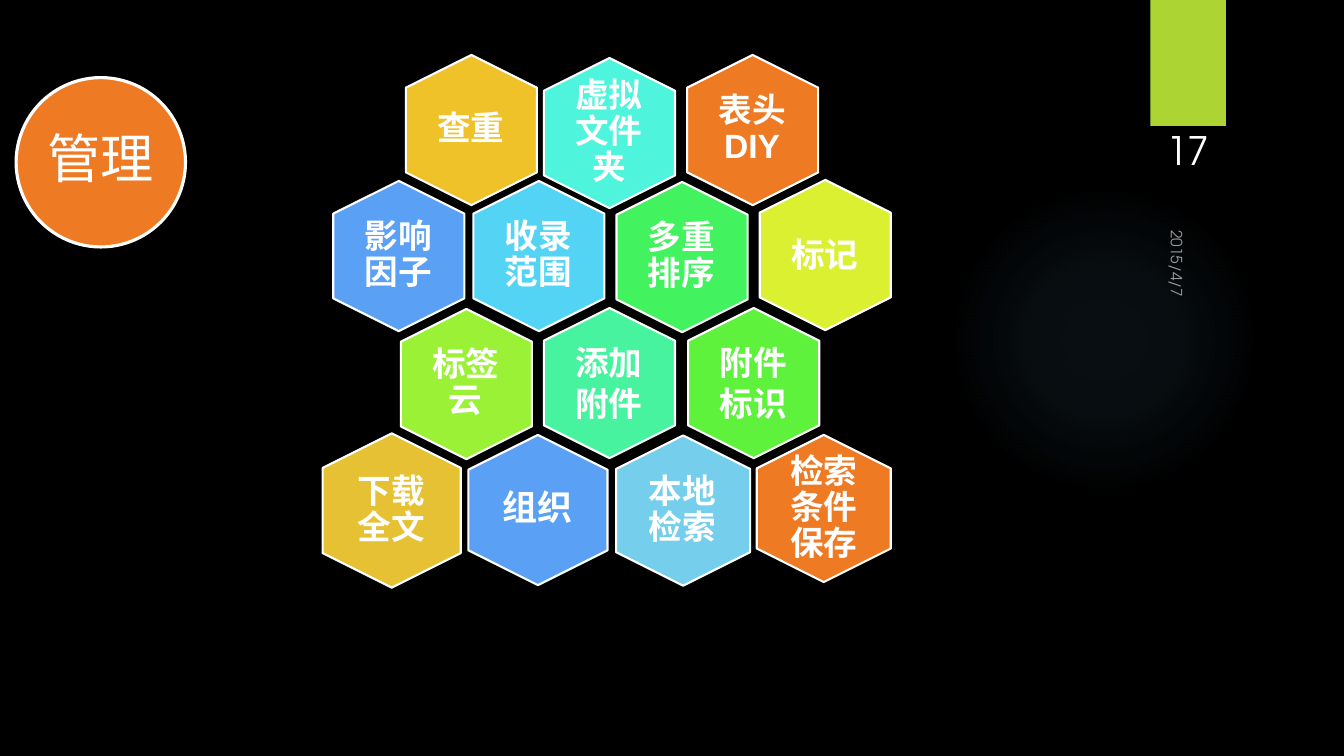
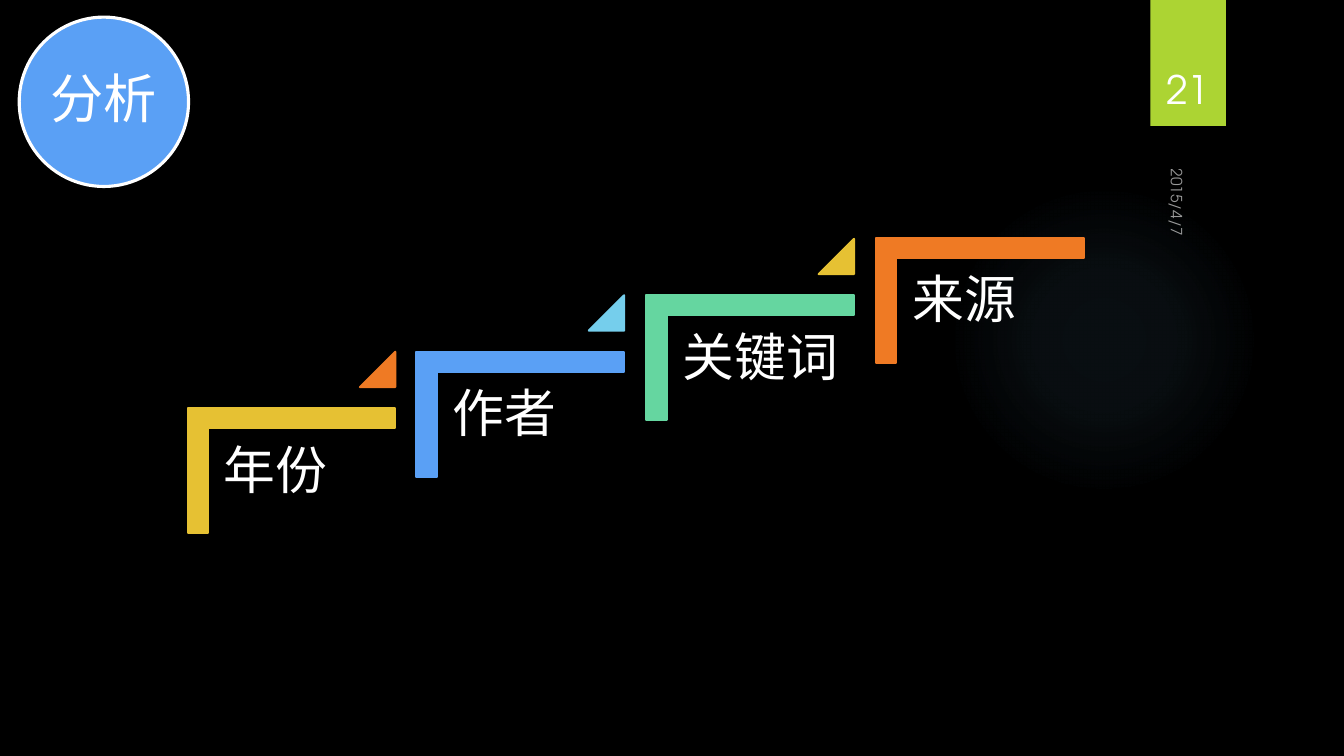
from typing import NamedTuple

from lxml.etree import SubElement
from pptx import Presentation
from pptx.dml.color import RGBColor
from pptx.enum.shapes import MSO_SHAPE
from pptx.enum.text import MSO_ANCHOR, MSO_AUTO_SIZE, PP_ALIGN
from pptx.oxml import parse_xml
from pptx.oxml.ns import nsdecls, qn
from pptx.util import Pt

PX = 9144
WHITE = "FFFFFF"
BLACK = "000000"
LIME = "ACD433"
ORANGE = "EF7A24"
BLUE = "5AA0F5"
SKY = "75CEEC"
GOLD = "E6C133"
MINT = "65D6A0"
CJK = "Noto Sans CJK SC"
LATIN = "Arial"
GEOMETRIC = "TeX Gyre Adventor"


class Box(NamedTuple):
    x: int
    y: int
    w: int
    h: int

    def emu(self):
        return [length * PX for length in self]

    def inner(self, dx, dy, w, h):
        return Box(self.x + dx, self.y + dy, w, h)

    def centred(self, w, h):
        return self.inner((self.w - w) // 2, (self.h - h) // 2, w, h)


class Cell(NamedTuple):
    label: str
    x: int
    y: int
    fill: str
    w: int = 149
    h: int = 130
    font: str = LATIN
    size: int = 24
    spacing: float = 0.9


FEATURES = [
    Cell("表头DIY", 672, 64, ORANGE),
    Cell("查重", 393, 64, "F0C22A"),
    Cell("标记", 744, 188, "DAF030", spacing=1.0),
    Cell("标签云", 388, 316, "9AF136"),
    Cell("附件标识", 673, 315, "5EF23C", spacing=1.0),
    Cell("多重排序", 602, 190, "42F25E"),
    Cell("添加附件", 530, 315, "48F39F", spacing=1.0),
    Cell("虚拟文件夹", 530, 67, "4EF4DC"),
    Cell("收录范围", 460, 189, "54D4F4"),
    Cell("影响因子", 321, 189, BLUE, font=CJK),
    Cell("下载全文", 312, 438, GOLD, w=153, h=137, font=CJK),
    Cell("检索条件保存", 744, 438, ORANGE, w=146, h=133, font=GEOMETRIC),
    Cell("组织", 459, 437, BLUE, h=138, font=GEOMETRIC, size=25),
    Cell("本地检索", 603, 440, SKY, h=133, font=GEOMETRIC),
]

STEPS = [
    ("年份", GOLD, ORANGE),
    ("作者", BLUE, SKY),
    ("关键词", MINT, GOLD),
    ("来源", ORANGE, None),
]


def rgb(value):
    return RGBColor.from_string(value)


def add_figure(slide, preset, box, fill, line=None, width=1.5, rotation=0, adjust=()):
    figure = slide.shapes.add_shape(preset, *box.emu())
    figure.shadow.inherit = False
    figure.rotation = rotation
    for index, value in enumerate(adjust):
        figure.adjustments[index] = value
    figure.fill.solid()
    figure.fill.fore_color.rgb = rgb(fill)
    if line:
        figure.line.color.rgb = rgb(line)
        figure.line.width = Pt(width)
    else:
        figure.line.fill.background()
    return figure


def write(holder, text, size=24, font=CJK, color=WHITE, alpha=None, bold=False,
          align=PP_ALIGN.CENTER, anchor=MSO_ANCHOR.MIDDLE, inset=(0, 0), spacing=None):
    frame = holder.text_frame
    frame.word_wrap = True
    frame.auto_size = MSO_AUTO_SIZE.NONE
    frame.vertical_anchor = anchor
    frame.margin_left = frame.margin_right = inset[0] * PX
    frame.margin_top = frame.margin_bottom = inset[1] * PX
    paragraph = frame.paragraphs[0]
    paragraph.alignment = align
    if spacing:
        paragraph.line_spacing = spacing
    run = paragraph.add_run()
    run.text = text
    run.font.size = Pt(size)
    run.font.bold = bold
    run.font.color.rgb = rgb(color)
    run.font.name = font
    properties = run.font._element
    SubElement(properties, qn("a:ea")).set("typeface", CJK)
    if alpha:
        tint = properties.find(".//" + qn("a:srgbClr"))
        SubElement(tint, qn("a:alpha")).set("val", str(alpha * 1000))


def add_label(slide, box, text, rotation=0, **style):
    label = slide.shapes.add_textbox(*box.emu())
    label.rotation = rotation
    write(label, text, **style)


def add_glow(slide, box):
    glow = add_figure(slide, MSO_SHAPE.OVAL, box, "7AC4F0")
    stops = "".join(
        f'<a:gs pos="{place * 1000}"><a:srgbClr val="7AC4F0">'
        f'<a:alpha val="{alpha * 1000}"/></a:srgbClr></a:gs>'
        for place, alpha in [(0, 7), (36, 6), (69, 0), (100, 0)]
    )
    gradient = parse_xml(
        f'<a:gradFill {nsdecls("a")} rotWithShape="1"><a:gsLst>{stops}</a:gsLst>'
        '<a:path path="circle"><a:fillToRect l="50000" t="50000" r="50000" b="50000"/>'
        "</a:path></a:gradFill>"
    )
    solid = glow.element.spPr.find(qn("a:solidFill"))
    solid.getparent().replace(solid, gradient)
    return glow


def furnish_layout(layout, slide):
    glow = add_glow(slide, Box(941, 183, 308, 308))
    band = add_figure(slide, MSO_SHAPE.RECTANGLE, Box(1141, 0, 75, 125), LIME)
    for number, part in enumerate((glow, band), 101):
        part.element.nvSpPr.cNvPr.set("id", str(number))
        layout.shapes.element.append(part.element)


def add_page_marks(slide, box, number):
    add_label(slide, box.inner(-21, 163, 108, 33), "2015/4/7", rotation=90, size=11,
              font=GEOMETRIC, alpha=60, align=PP_ALIGN.LEFT, anchor=MSO_ANCHOR.TOP,
              inset=(10, 5))
    add_label(slide, box, number, size=28, font=GEOMETRIC,
              anchor=MSO_ANCHOR.BOTTOM, inset=(10, 5))


def add_heading(slide, box, text, fill):
    add_figure(slide, MSO_SHAPE.OVAL, box, fill, WHITE, 2.25)
    title = slide.shapes.title
    title.left, title.top, title.width, title.height = box.centred(119, 119).emu()
    write(title, text, size=38, inset=(5, 5), spacing=0.9)
    slide.shapes.element.append(title.element)


def add_hexagon(slide, box, cell):
    add_figure(slide, MSO_SHAPE.HEXAGON, box, cell.fill, WHITE, rotation=90,
               adjust=(0.25, 1.155))
    add_label(slide, box.centred(90, 103), cell.label, size=cell.size, font=cell.font,
              bold=True, spacing=cell.spacing)


def add_step(slide, box, text, fill, marker):
    add_figure(slide, MSO_SHAPE.CORNER, box, fill, fill, rotation=90,
               adjust=(0.161, 0.161))
    add_label(slide, box.inner(-20, 62, 186, 163), text, size=37, align=PP_ALIGN.LEFT,
              anchor=MSO_ANCHOR.TOP, inset=(15, 15), spacing=0.9)
    if marker:
        add_figure(slide, MSO_SHAPE.ISOSCELES_TRIANGLE, box.inner(130, -15, 35, 35),
                   marker, marker, adjust=(1,))


def build_management(slide):
    add_page_marks(slide, Box(1132, 93, 92, 84), "17")
    add_heading(slide, Box(16, 77, 168, 168), "管理", ORANGE)
    for cell in FEATURES:
        add_hexagon(slide, Box(cell.x, cell.y, cell.w, cell.h), cell)


def build_analysis(slide):
    add_page_marks(slide, Box(1132, 32, 92, 84), "21")
    add_heading(slide, Box(19, 17, 168, 168), "分析", BLUE)
    for index, step in enumerate(STEPS):
        box = Box(227 + index * 683 // 3, 364 - index * 169 // 3, 124, 206)
        add_step(slide, box, *step)


def main():
    deck = Presentation()
    deck.slide_width, deck.slide_height = 1333 * PX, 750 * PX
    backdrop = deck.slide_master.background.fill
    backdrop.solid()
    backdrop.fore_color.rgb = rgb(BLACK)
    layout = deck.slide_layouts.get_by_name("Title Only")
    management, analysis = [deck.slides.add_slide(layout) for _ in range(2)]
    furnish_layout(layout, management)
    build_management(management)
    build_analysis(analysis)
    deck.save("out.pptx")


if __name__ == "__main__":
    main()
